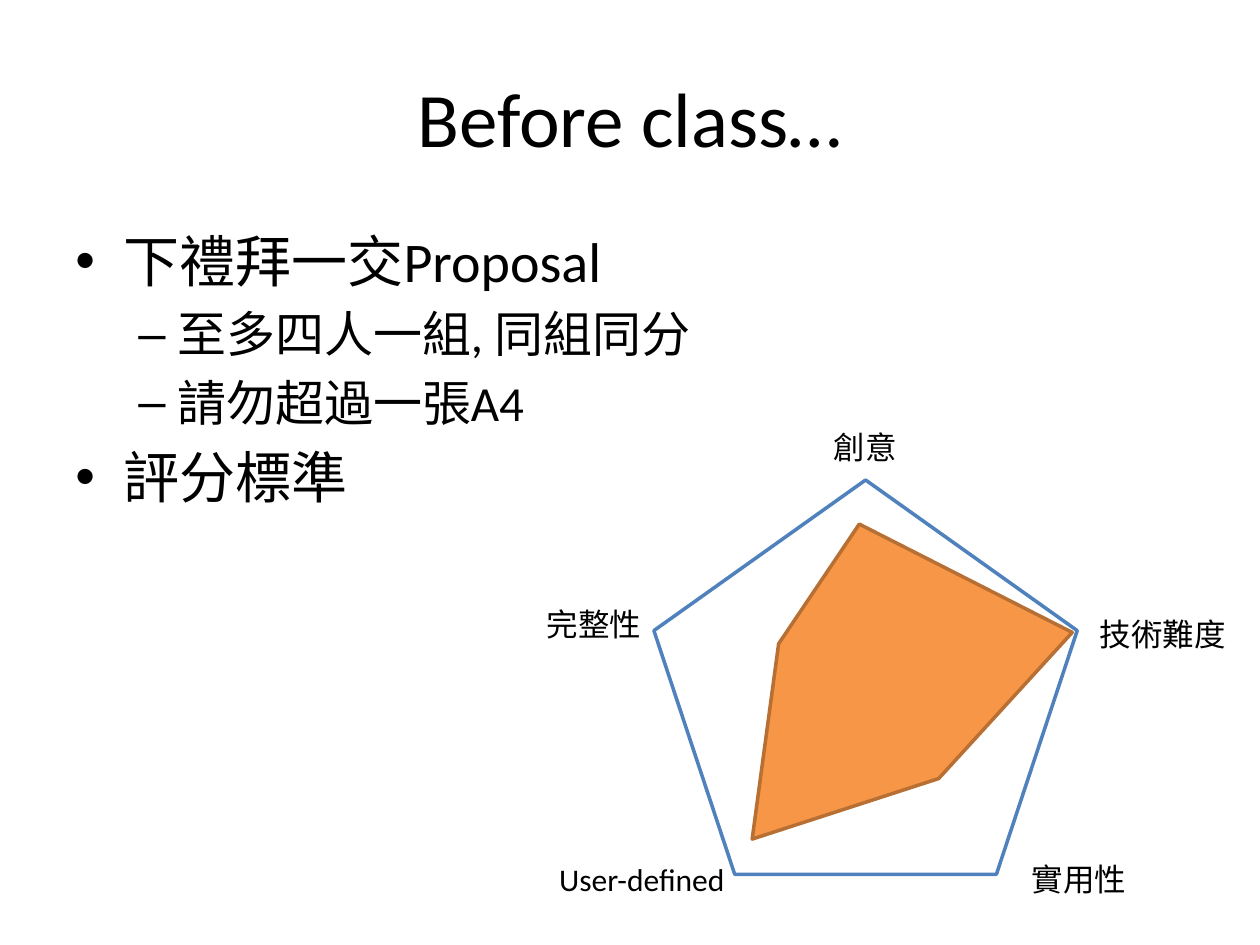
from typing import NamedTuple

from lxml.etree import SubElement
from pptx import Presentation
from pptx.dml.color import RGBColor
from pptx.enum.shapes import MSO_SHAPE
from pptx.enum.text import MSO_ANCHOR, MSO_AUTO_SIZE, PP_ALIGN
from pptx.oxml.ns import qn
from pptx.util import Inches, Pt


class Box(NamedTuple):
    left: float
    top: float
    width: float
    height: float


class Level(NamedTuple):
    size: int
    bullet: str
    margin: float
    hanging: float


class Point(NamedTuple):
    text: str
    level: Level


class Criterion(NamedTuple):
    name: str
    box: Box


TOPIC = Level(32, "•", 0.38, 0.38)
DETAIL = Level(28, "–", 0.81, 0.31)

POINTS = [
    Point("下禮拜一交Proposal", TOPIC),
    Point("至多四人一組, 同組同分", DETAIL),
    Point("請勿超過一張A4", DETAIL),
    Point("評分標準", TOPIC),
]

CRITERIA = [
    Criterion("創意", Box(6.52, 3.35, 0.71, 0.4)),
    Criterion("技術難度", Box(8.63, 4.83, 1.21, 0.4)),
    Criterion("實用性", Box(8.09, 6.78, 0.96, 0.4)),
    Criterion("User-defined", Box(4.34, 6.78, 1.54, 0.4)),
    Criterion("完整性", Box(4.24, 4.75, 0.96, 0.4)),
]

SCORES = [(6.82, 4.16), (6.18, 5.11), (5.97, 6.66), (7.45, 6.18), (8.51, 5.02)]


def color(value: str) -> RGBColor:
    return RGBColor.from_string(value)


def add_frame(slide, box: Box, wrap: bool = True):
    frame = slide.shapes.add_textbox(*map(Inches, box)).text_frame
    frame.word_wrap = wrap
    return frame


def write(paragraph, text: str, size: int) -> None:
    paragraph.text = text
    paragraph.font.name = "Calibri"
    paragraph.font.size = Pt(size)
    paragraph.font.color.rgb = color("000000")


def add_bullet(paragraph, level: Level) -> None:
    properties = paragraph._p.get_or_add_pPr()
    properties.set("marL", str(Inches(level.margin)))
    properties.set("indent", str(-Inches(level.hanging)))
    SubElement(properties, qn("a:buFont")).set("typeface", "Arial")
    SubElement(properties, qn("a:buChar")).set("char", level.bullet)


def add_title(slide, text: str, box: Box) -> None:
    frame = add_frame(slide, box)
    frame.vertical_anchor = MSO_ANCHOR.MIDDLE
    heading = frame.paragraphs[0]
    heading.alignment = PP_ALIGN.CENTER
    write(heading, text, 44)


def add_points(slide, points: list[Point], box: Box) -> None:
    frame = add_frame(slide, box)
    for index, point in enumerate(points):
        paragraph = frame.add_paragraph() if index else frame.paragraphs[0]
        paragraph.level = int(point.level is DETAIL)
        paragraph.space_before = Pt(point.level.size * 0.2)
        add_bullet(paragraph, point.level)
        write(paragraph, point.text, point.level.size)


def add_criterion(slide, criterion: Criterion) -> None:
    frame = add_frame(slide, criterion.box, wrap=False)
    frame.auto_size = MSO_AUTO_SIZE.SHAPE_TO_FIT_TEXT
    write(frame.paragraphs[0], criterion.name, 18)


def paint(shape, fill: str, line: str) -> None:
    shape.shadow.inherit = False
    shape.fill.solid()
    shape.fill.fore_color.rgb = color(fill)
    shape.line.color.rgb = color(line)
    shape.line.width = Pt(2)


def add_scores(slide, scores: list[tuple[float, float]]) -> None:
    start, *rest = [(Inches(x), Inches(y)) for x, y in scores]
    builder = slide.shapes.build_freeform(*start)
    builder.add_line_segments(rest, close=True)
    paint(builder.convert_to_shape(), "F79646", "B76F34")


def main() -> None:
    deck = Presentation()
    deck.slide_width, deck.slide_height = Inches(10), Inches(7.5)
    slide = deck.slides.add_slide(deck.slide_layouts[6])

    add_title(slide, "Before class…", Box(0.5, 0.3, 9, 1.25))
    add_points(slide, POINTS, Box(0.5, 1.75, 9, 4.95))

    scale = slide.shapes.add_shape(
        MSO_SHAPE.REGULAR_PENTAGON, *map(Inches, Box(5.19, 3.81, 3.36, 3.13))
    )
    paint(scale, "FFFFFF", "4F81BD")
    for criterion in CRITERIA:
        add_criterion(slide, criterion)
    add_scores(slide, SCORES)

    deck.save("out.pptx")


if __name__ == "__main__":
    main()
